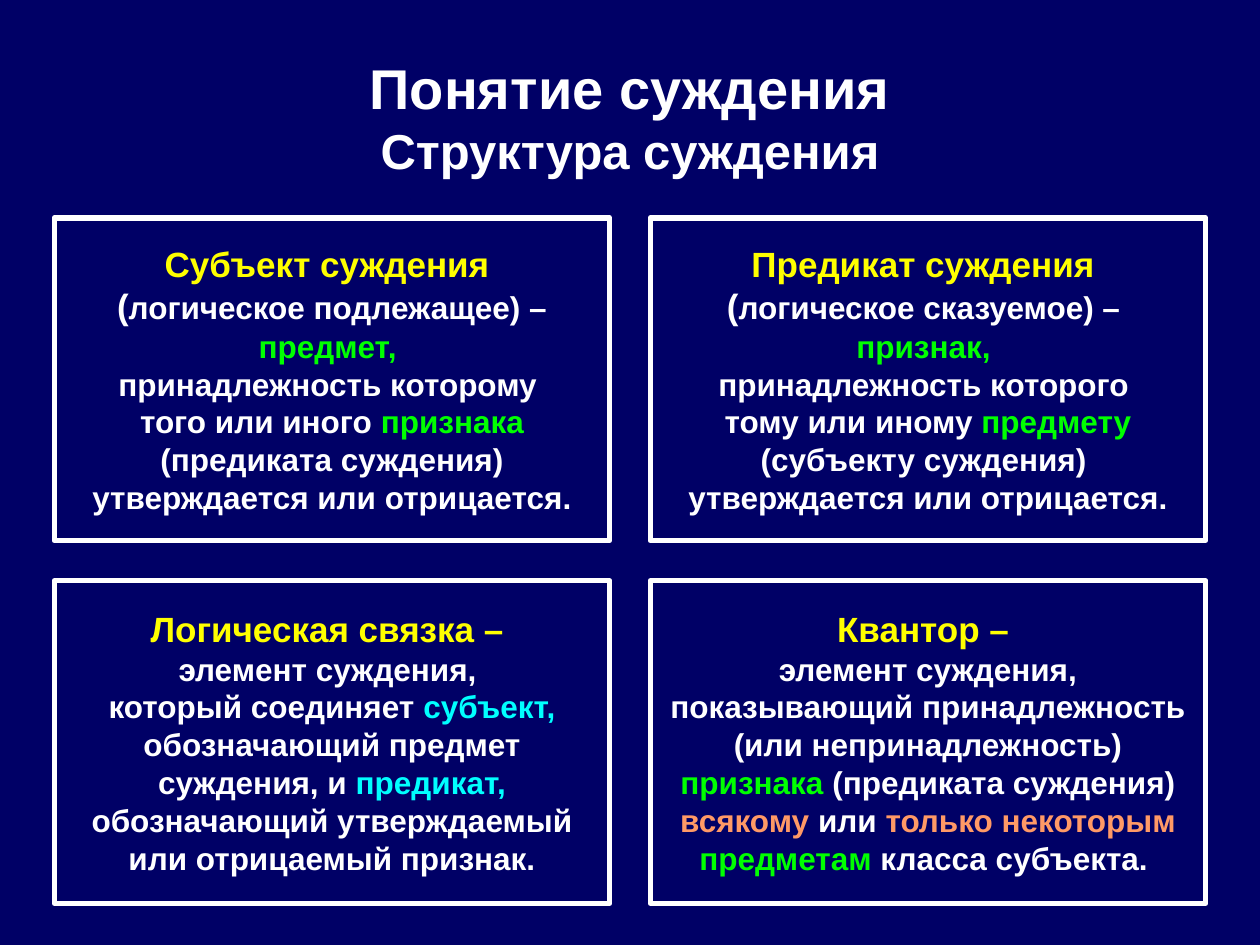
import copy

import pptx
import pptx.dml.color
import pptx.enum.shapes
import pptx.enum.text
import pptx.util

Inches = pptx.util.Inches
WHITE, YELLOW, GREEN = "FFFFFF", "FFFF00", "00FF00"
CYAN, ORANGE, NAVY = "00FFFF", "FF9966", "000066"


def rgb(value):
    return pptx.dml.color.RGBColor.from_string(value)


def write_centred(frame, pieces):
    frame.word_wrap = True
    frame.auto_size = pptx.enum.text.MSO_AUTO_SIZE.NONE
    frame.vertical_anchor = pptx.enum.text.MSO_ANCHOR.MIDDLE
    paragraph = frame.paragraphs[0]
    paragraph.alignment = pptx.enum.text.PP_ALIGN.CENTER
    for wording, size, color in pieces:
        for number, line in enumerate(wording.split("\n")):
            if number:
                line_break = paragraph._p.add_br()
                line_break.append(copy.deepcopy(run._r.rPr))
            if line:
                run = paragraph.add_run()
                run.text = line
                run.font.name = "Arial"
                run.font.size = pptx.util.Pt(size)
                run.font.bold = True
                run.font.color.rgb = rgb(color)


presentation = pptx.Presentation()
presentation.slide_width = Inches(10)
presentation.slide_height = Inches(7.5)
slide = presentation.slides.add_slide(presentation.slide_layouts[5])
slide.background.fill.solid()
slide.background.fill.fore_color.rgb = rgb(NAVY)

title = slide.shapes.title
title.left, title.top = Inches(0.5), Inches(0.3)
title.width, title.height = Inches(9), Inches(1.25)
write_centred(title.text_frame, [
    ("Понятие суждения\n", 32, WHITE),
    ("Структура суждения", 28, WHITE),
])

definitions = [
    [
        ("Субъект суждения \n", 20, YELLOW),
        ("(", 20, WHITE),
        ("логическое подлежащее) – ", 18, WHITE),
        ("предмет, \n", 18, GREEN),
        ("принадлежность которому \nтого или иного ", 18, WHITE),
        ("признака", 18, GREEN),
        (" (предиката суждения) утверждается или отрицается.", 18, WHITE),
    ],
    [
        ("Предикат суждения \n", 20, YELLOW),
        ("(", 20, WHITE),
        ("логическое сказуемое) – \n", 18, WHITE),
        ("признак, \n", 18, GREEN),
        ("принадлежность которого \nтому или иному ", 18, WHITE),
        ("предмету", 18, GREEN),
        (" (субъекту суждения) \n утверждается или отрицается. ", 18, WHITE),
    ],
    [
        ("Логическая связка – \n", 20, YELLOW),
        ("элемент суждения, \nкоторый соединяет ", 18, WHITE),
        ("субъект, ", 18, CYAN),
        ("обозначающий предмет суждения, и ", 18, WHITE),
        ("предикат, ", 18, CYAN),
        ("обозначающий утверждаемый или отрицаемый признак.", 18, WHITE),
    ],
    [
        ("Квантор – \n", 20, YELLOW),
        (" элемент суждения, \nпоказывающий принадлежность (или непринадлежность) ", 18, WHITE),
        ("признака", 18, GREEN),
        (" (предиката суждения) ", 18, WHITE),
        ("всякому ", 18, ORANGE),
        ("или ", 18, WHITE),
        ("только некоторым ", 18, ORANGE),
        ("предметам", 18, GREEN),
        (" класса субъекта. ", 18, WHITE),
    ],
]

for index, definition in enumerate(definitions):
    row, column = divmod(index, 2)
    box = slide.shapes.add_shape(
        pptx.enum.shapes.MSO_SHAPE.RECTANGLE,
        Inches(0.43 + 4.73 * column), Inches(1.73 + 2.88 * row),
        Inches(4.41), Inches(2.56))
    box.shadow.inherit = False
    box.fill.background()
    box.line.color.rgb = rgb(WHITE)
    box.line.width = pptx.util.Pt(3)
    write_centred(box.text_frame, definition)

presentation.save("out.pptx")
